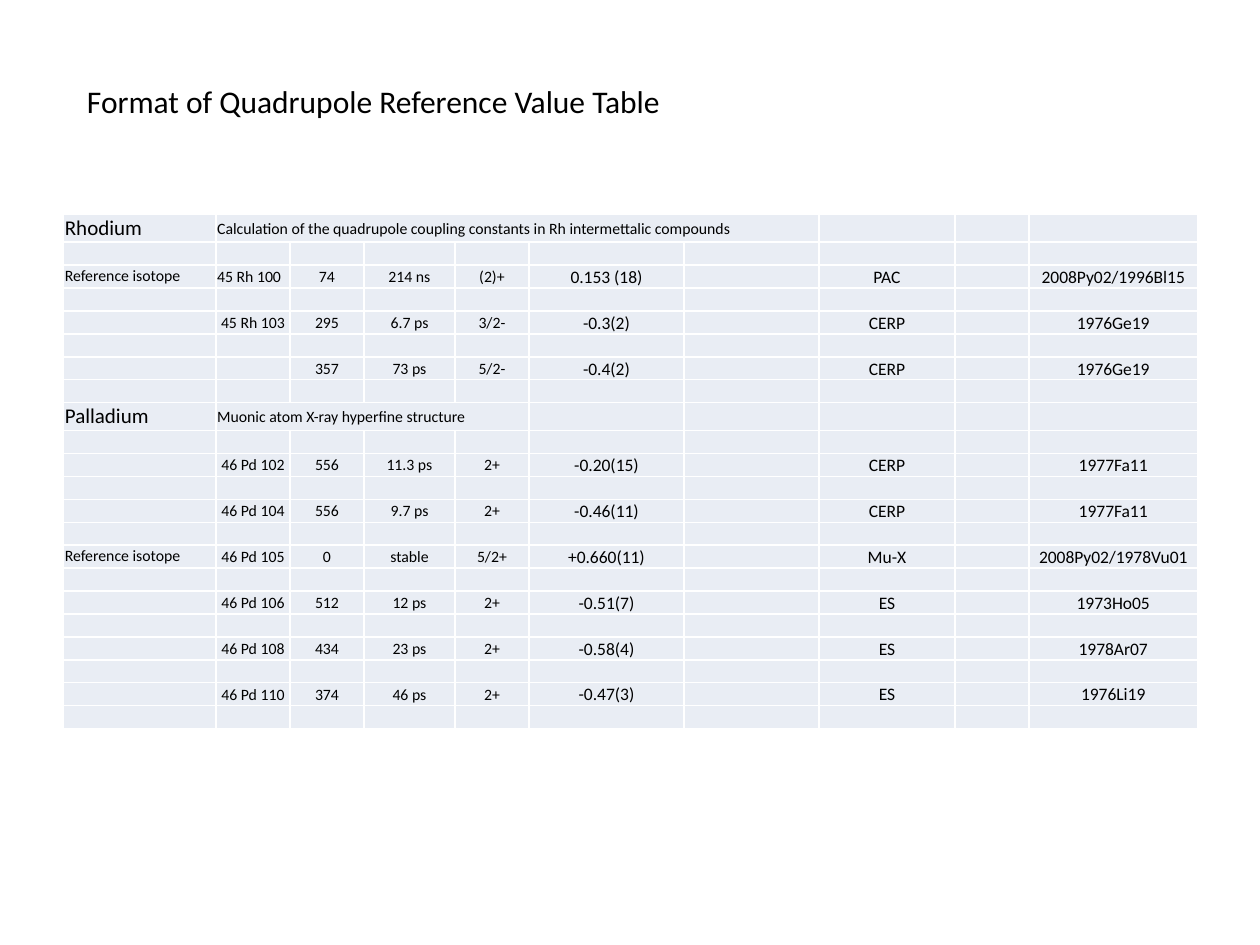
from lxml.etree import SubElement
from pptx import Presentation
from pptx.dml.color import RGBColor
from pptx.enum.text import MSO_ANCHOR as ANCHOR, PP_ALIGN as ALIGN
from pptx.oxml.ns import qn
from pptx.util import Pt

COLORS = {"text": "000000", "cell": "E9EDF4", "border": "FFFFFF"}
FONT = "Calibri"
INSET = 0.7
COL_WIDTHS = [87, 42.3, 42.3, 52, 42.3, 88.6, 77.2, 77.6, 42.3, 96.4]
HEADING_HEIGHT, ROW_HEIGHT = 16, 13.1
VALUE_COLS = [0, 1, 2, 3, 4, 5, 7, 9]  # the other columns are spacers
REFERENCE = "Reference isotope"

# element, method, last column the method text spans, isotope rows
SECTIONS = [
    ("Rhodium",
     "Calculation of the quadrupole coupling constants in Rh intermettalic compounds", 6, [
         (REFERENCE, "45 Rh 100", "74", "214 ns", "(2)+", "0.153 (18)", "PAC", "2008Py02/1996Bl15"),
         ("", "45 Rh 103", "295", "6.7 ps", "3/2-", "-0.3(2)", "CERP", "1976Ge19"),
         ("", "", "357", "73 ps", "5/2-", "-0.4(2)", "CERP", "1976Ge19"),
     ]),
    ("Palladium", "Muonic atom X-ray hyperfine structure", 4, [
        ("", "46 Pd 102", "556", "11.3 ps", "2+", "-0.20(15)", "CERP", "1977Fa11"),
        ("", "46 Pd 104", "556", "9.7 ps", "2+", "-0.46(11)", "CERP", "1977Fa11"),
        (REFERENCE, "46 Pd 105", "0", "stable", "5/2+", "+0.660(11)", "Mu-X", "2008Py02/1978Vu01"),
        ("", "46 Pd 106", "512", "12 ps", "2+", "-0.51(7)", "ES", "1973Ho05"),
        ("", "46 Pd 108", "434", "23 ps", "2+", "-0.58(4)", "ES", "1978Ar07"),
        ("", "46 Pd 110", "374", "46 ps", "2+", "-0.47(3)", "ES", "1976Li19"),
    ]),
]


def rgb(name):
    return RGBColor.from_string(COLORS[name])


def write(tf, text, size=9, align=ALIGN.LEFT):
    p = tf.paragraphs[0]
    p.alignment = align
    r = p.add_run()
    r.text = text
    r.font.name, r.font.size = FONT, Pt(size)
    r.font.color.rgb = rgb("text")


def write_cell(cell, text, anchor=ANCHOR.MIDDLE, **fmt):
    cell.vertical_anchor = anchor
    write(cell.text_frame, text, **fmt)


def format_cell(cell):
    """Set insets, white borders and fill, and keep an empty cell's line small."""
    cell.margin_left = cell.margin_right = cell.margin_top = Pt(INSET)
    cell.margin_bottom = 0
    tc_pr = cell._tc.get_or_add_tcPr()
    for side in ("lnL", "lnR", "lnT", "lnB"):
        ln = SubElement(tc_pr, qn(f"a:{side}"), w=str(Pt(1)))
        fill = SubElement(ln, qn("a:solidFill"))
        SubElement(fill, qn("a:srgbClr"), val=COLORS["border"])
    cell.fill.solid()
    cell.fill.fore_color.rgb = rgb("cell")
    if not cell.text:
        SubElement(cell.text_frame.paragraphs[0]._p, qn("a:endParaRPr"), sz="900")


def add_title(slide, text):
    title = slide.shapes.title
    title.left, title.top, title.width, title.height = Pt(42.5), Pt(43.2), Pt(499), Pt(28.8)
    title.text_frame.vertical_anchor = ANCHOR.TOP
    write(title.text_frame, text, size=18)


def fill_heading(table, row, element, method, last_col):
    table.rows[row].height = Pt(HEADING_HEIGHT)
    write_cell(table.cell(row, 0), element, anchor=ANCHOR.TOP, size=12)
    start = table.cell(row, 1)
    start.merge(table.cell(row, last_col))
    write_cell(start, method)


def fill_isotope(table, row, values):
    for col, text in zip(VALUE_COLS, values):
        if not text:
            continue
        cell = table.cell(row, col)
        if col == 0:
            write_cell(cell, text, anchor=ANCHOR.TOP)
        elif col < 5:
            # the first isotope of the table is set flush left
            align = ALIGN.LEFT if (row, col) == (2, 1) else ALIGN.CENTER
            write_cell(cell, text, align=align)
        else:
            write_cell(cell, text, anchor=ANCHOR.BOTTOM, size=10, align=ALIGN.CENTER)


def add_isotope_table(slide):
    # a blank row follows each filled one
    n_rows = 2 * sum(1 + len(isotopes) for *_, isotopes in SECTIONS)
    height = n_rows * ROW_HEIGHT + len(SECTIONS) * (HEADING_HEIGHT - ROW_HEIGHT)
    table = slide.shapes.add_table(n_rows, len(COL_WIDTHS), Pt(36.4), Pt(122.4),
                                   Pt(sum(COL_WIDTHS)), Pt(height)).table
    table.first_row = table.horz_banding = False
    for column, width in zip(table.columns, COL_WIDTHS):
        column.width = Pt(width)
    for row in table.rows:
        row.height = Pt(ROW_HEIGHT)

    row = 0
    for element, method, last_col, isotopes in SECTIONS:
        fill_heading(table, row, element, method, last_col)
        for values in isotopes:
            row += 2
            fill_isotope(table, row, values)
        row += 2
    for cell in table.iter_cells():
        format_cell(cell)


def main():
    prs = Presentation()
    prs.slide_width, prs.slide_height = Pt(720), Pt(540)
    slide = prs.slides.add_slide(prs.slide_layouts[5])
    add_isotope_table(slide)
    add_title(slide, "Format of Quadrupole Reference Value Table")
    prs.save("out.pptx")


if __name__ == "__main__":
    main()
